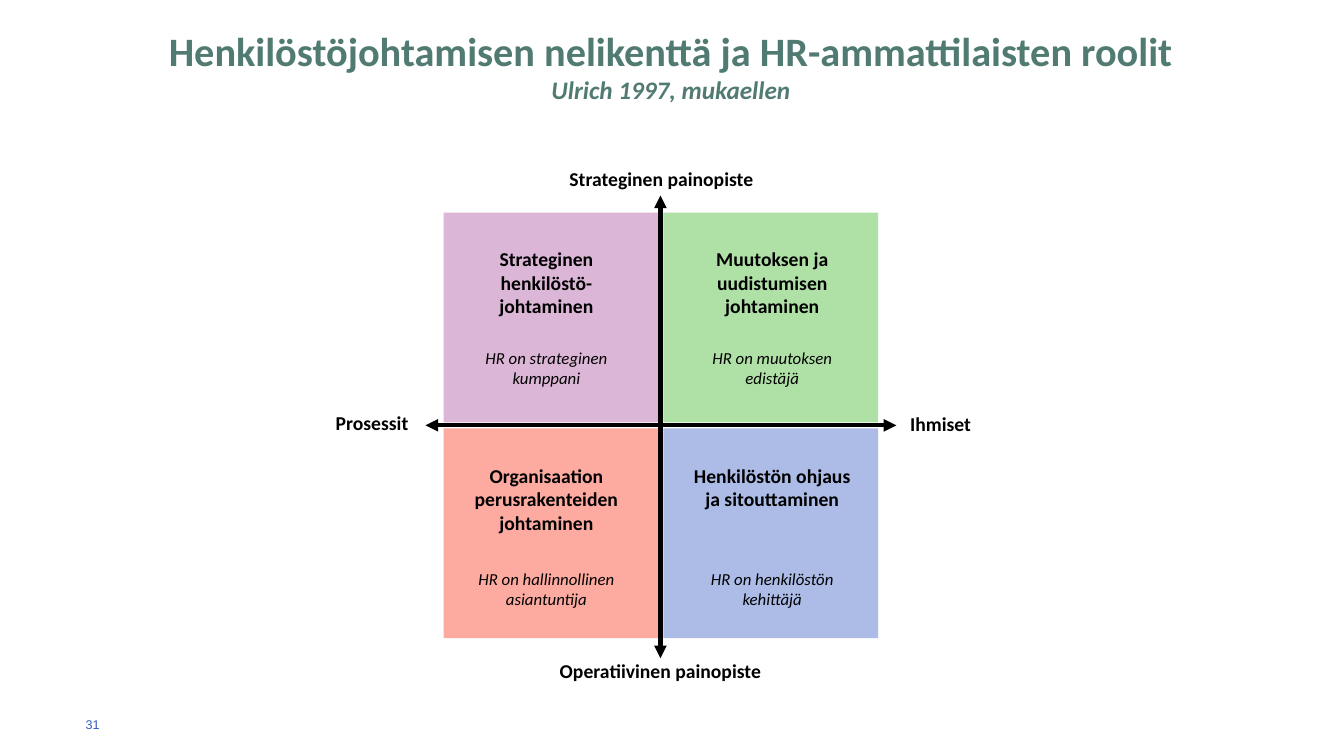
import pptx
import pptx.util
import pptx.dml.color
import pptx.enum.shapes
import pptx.enum.text
import pptx.oxml

Inch = pptx.util.Inches
Mid = pptx.enum.text.MSO_ANCHOR.MIDDLE


def paint(hue):
    return pptx.dml.color.RGBColor.from_string(hue)


def label(text, mid, top, wide, high, size=14, bold=True, font="Calibri", hue="000000"):
    """Add centred text around the x position mid."""
    box = slide.shapes.add_textbox(Inch(mid - wide / 2), Inch(top), Inch(wide), Inch(high))
    frame = box.text_frame
    frame.word_wrap = True
    frame.margin_left = frame.margin_right = frame.margin_top = frame.margin_bottom = 0
    frame.text = text
    para = frame.paragraphs[0]
    para.alignment = pptx.enum.text.PP_ALIGN.CENTER
    face = para.runs[0].font
    face.name, face.size, face.bold = font, pptx.util.Pt(size), bold
    face.color.rgb = paint(hue)
    return box


deck = pptx.Presentation()
deck.slide_width, deck.slide_height = Inch(13.33), Inch(7.5)
slide = deck.slides.add_slide(deck.slide_layouts[5])

# Title with its source line
title = slide.shapes.title
title.left, title.top, title.width, title.height = Inch(0.2), Inch(0.25), Inch(12.91), Inch(0.79)
frame = title.text_frame
frame.text = "Henkilöstöjohtamisen nelikenttä ja HR-ammattilaisten roolit\vUlrich 1997, mukaellen"
frame.auto_size = pptx.enum.text.MSO_AUTO_SIZE.NONE
frame.vertical_anchor = Mid
para = frame.paragraphs[0]
para.alignment = pptx.enum.text.PP_ALIGN.CENTER
for run, size, slant in zip(para.runs, (28.8, 18), (False, True)):
    face = run.font
    face.name, face.size, face.bold, face.italic = "Calibri", pptx.util.Pt(size), True, slant
    face.color.rgb = paint("507A72")

# Grid of four fields, two columns by two rows
left, top, side = 4.4, 2.11, 2.13
wide, high = 2.18, 2.14
fields = [
    ("DCB6D6", "Strateginen henkilöstö-johtaminen", "HR on strateginen kumppani"),
    ("AFE0A6", "Muutoksen ja uudistumisen johtaminen", "HR on muutoksen edistäjä"),
    ("FDAAA1", "Organisaation perusrakenteiden johtaminen", "HR on hallinnollinen asiantuntija"),
    ("ACBCE7", "Henkilöstön ohjaus ja sitouttaminen", "HR on henkilöstön kehittäjä"),
]
for spot, (hue, task, role) in enumerate(fields):
    row, col = divmod(spot, 2)
    x, y = left + col * wide, top + row * high
    field = slide.shapes.add_shape(pptx.enum.shapes.MSO_SHAPE.RECTANGLE,
                                   Inch(x), Inch(y), Inch(side), Inch(side - 0.05))
    field.shadow.inherit = False
    field.fill.solid()
    field.fill.fore_color.rgb = paint(hue)
    field.line.fill.background()
    mid = 5.42 + col * 2.24
    label(task, mid, 2.45 + row * 2.15, 1.6, 0.95)
    note = label(role, mid, 3.45 + row * 2.19, 1.6, 0.54, 12, False)
    note.text_frame.paragraphs[0].runs[0].font.italic = True

# Axes with an arrowhead at both ends
for ends in ((4.22, 4.22, 8.89, 4.22), (6.55, 1.94, 6.55, 6.53)):
    axis = slide.shapes.add_connector(pptx.enum.shapes.MSO_CONNECTOR.STRAIGHT, *map(Inch, ends))
    axis.line.color.rgb = paint("000000")
    axis.line.width = pptx.util.Pt(3)
    pen = axis.line._get_or_add_ln()
    for tip in ("headEnd", "tailEnd"):
        pen.append(pptx.oxml.parse_xml(
            f'<a:{tip} xmlns:a="http://schemas.openxmlformats.org/drawingml/2006/main" type="triangle"/>'))
    axis._element.spPr.append(pptx.oxml.parse_xml(
        '<a:effectLst xmlns:a="http://schemas.openxmlformats.org/drawingml/2006/main"/>'))

# Names of the axis ends
for text, mid, y, span in (
    ("Strateginen painopiste", 6.56, 1.66, 2.59),
    ("Operatiivinen painopiste", 6.55, 6.54, 3.52),
    ("Prosessit", 3.69, 4.08, 1.34),
    ("Ihmiset", 9.33, 4.09, 1.24),
):
    label(text, mid, y, span, 0.32)

# Page number
page = label("31", 1.05, 7.06, 0.4, 0.25, 9, False, "Arial", "365ABD")
page.text_frame.vertical_anchor = Mid
page.text_frame.paragraphs[0].alignment = pptx.enum.text.PP_ALIGN.LEFT

deck.save("out.pptx")
